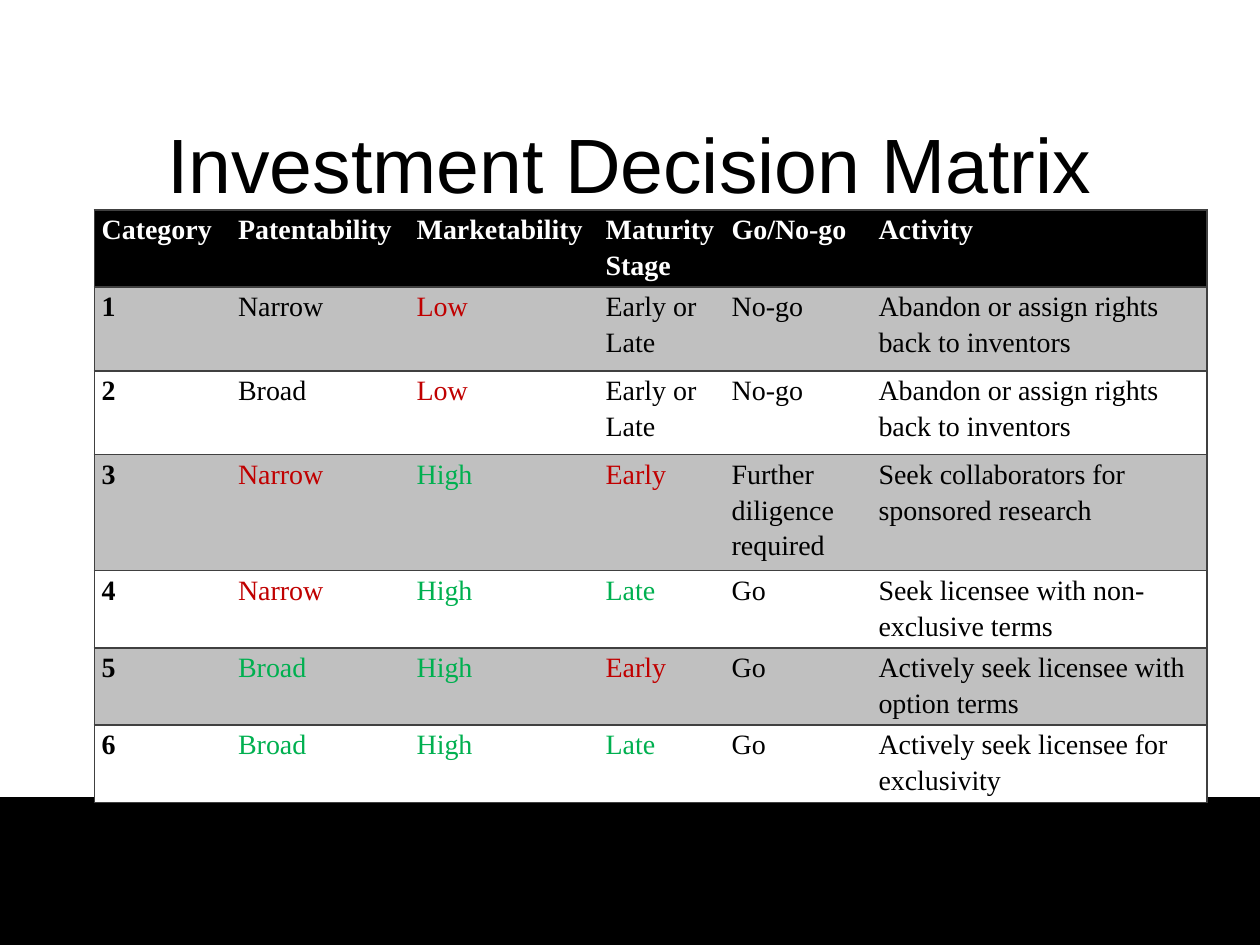
"""Build the investment decision matrix slide."""
from dataclasses import dataclass
from typing import NamedTuple

from lxml.etree import SubElement
from pptx import Presentation
from pptx.dml.color import RGBColor
from pptx.enum.shapes import MSO_SHAPE
from pptx.enum.text import MSO_ANCHOR, PP_ALIGN
from pptx.oxml.ns import qn
from pptx.util import Cm, Pt


@dataclass(frozen=True)
class Theme:
    black: str = "000000"
    white: str = "FFFFFF"
    band: str = "C0C0C0"
    border: str = "404040"
    weak: str = "C00000"
    strong: str = "00B050"
    title_font: str = "Arial"
    table_font: str = "Times New Roman"
    title_size: int = 44
    table_size: int = 16
    border_width: int = 1


THEME = Theme()


class Entry(NamedTuple):
    text: str
    color: str = THEME.black
    bold: bool = False


class MatrixRow(NamedTuple):
    height: float
    fill: str
    entries: list[Entry]


def weak(text: str) -> Entry:
    return Entry(text, THEME.weak)


def strong(text: str) -> Entry:
    return Entry(text, THEME.strong)


COLUMN_WIDTHS = [2.75, 3.6, 3.81, 2.54, 2.96, 6.77]
HEADINGS = ["Category", "Patentability", "Marketability", "Maturity Stage", "Go/No-go", "Activity"]
ABANDON = Entry("Abandon or assign rights back to inventors")
EITHER_STAGE, NO_GO, GO = Entry("Early or Late"), Entry("No-go"), Entry("Go")
CATEGORIES = [
    (1.69, [Entry("Narrow"), weak("Low"), EITHER_STAGE, NO_GO, ABANDON]),
    (1.69, [Entry("Broad"), weak("Low"), EITHER_STAGE, NO_GO, ABANDON]),
    (1.69, [weak("Narrow"), strong("High"), weak("Early"), Entry("Further diligence required"),
            Entry("Seek collaborators for sponsored research")]),
    (1.27, [weak("Narrow"), strong("High"), strong("Late"), GO,
            Entry("Seek licensee with non-exclusive terms")]),
    (1.27, [strong("Broad"), strong("High"), weak("Early"), GO,
            Entry("Actively seek licensee with option terms")]),
    (1.27, [strong("Broad"), strong("High"), strong("Late"), GO,
            Entry("Actively seek licensee for exclusivity")]),
]


def matrix_rows() -> list[MatrixRow]:
    header = MatrixRow(0.85, THEME.black, [Entry(text, THEME.white, True) for text in HEADINGS])
    body = [
        MatrixRow(height, THEME.band if number % 2 else THEME.white,
                  [Entry(str(number), bold=True), *entries])
        for number, (height, entries) in enumerate(CATEGORIES, start=1)
    ]
    return [header, *body]


def set_borders(cell, visible_sides: str) -> None:
    properties = cell._tc.get_or_add_tcPr()
    for side in "LRTB":
        line = SubElement(properties, qn(f"a:ln{side}"), w=str(Pt(THEME.border_width)))
        if side in visible_sides:
            fill = SubElement(line, qn("a:solidFill"))
            SubElement(fill, qn("a:srgbClr"), val=THEME.border)
        else:
            SubElement(line, qn("a:noFill"))


def fill_cell(cell, entry: Entry, fill: str, visible_sides: str) -> None:
    set_borders(cell, visible_sides)
    cell.fill.solid()
    cell.fill.fore_color.rgb = RGBColor.from_string(fill)
    cell.margin_left = cell.margin_right = Cm(0.15)
    cell.margin_top = cell.margin_bottom = 0
    cell.text = entry.text
    paragraph = cell.text_frame.paragraphs[0]
    paragraph.line_spacing = 1.15
    paragraph.font.name = THEME.table_font
    paragraph.font.size = Pt(THEME.table_size)
    paragraph.font.bold = entry.bold
    paragraph.font.color.rgb = RGBColor.from_string(entry.color)


def add_matrix(slide, rows: list[MatrixRow]) -> None:
    matrix = slide.shapes.add_table(
        len(rows), len(COLUMN_WIDTHS), Cm(1.9), Cm(4.23),
        Cm(sum(COLUMN_WIDTHS)), Cm(sum(row.height for row in rows)),
    ).table
    for column, width in zip(matrix.columns, COLUMN_WIDTHS):
        column.width = Cm(width)
    last = len(COLUMN_WIDTHS) - 1
    for row_index, row in enumerate(rows):
        matrix.rows[row_index].height = Cm(row.height)
        for column_index, entry in enumerate(row.entries):
            sides = "TB" + {0: "L", last: "R"}.get(column_index, "")
            fill_cell(matrix.cell(row_index, column_index), entry, row.fill, sides)


def add_footer_band(slide) -> None:
    footer = slide.shapes.add_shape(MSO_SHAPE.RECTANGLE, 0, Cm(16.08), Cm(25.4), Cm(2.97))
    footer.shadow.inherit = False
    footer.fill.solid()
    footer.fill.fore_color.rgb = RGBColor.from_string(THEME.black)
    footer.line.color.rgb = RGBColor.from_string(THEME.black)
    footer.line.width = Pt(0.75)


def add_title(slide, text: str) -> None:
    title = slide.shapes.add_textbox(Cm(1.9), Cm(1.7), Cm(21.6), Cm(3.18)).text_frame
    title.word_wrap = True
    title.vertical_anchor = MSO_ANCHOR.MIDDLE
    title.text = text
    paragraph = title.paragraphs[0]
    paragraph.alignment = PP_ALIGN.CENTER
    paragraph.font.name = THEME.title_font
    paragraph.font.size = Pt(THEME.title_size)
    paragraph.font.color.rgb = RGBColor.from_string(THEME.black)


def main() -> None:
    presentation = Presentation()
    presentation.slide_width, presentation.slide_height = Cm(25.4), Cm(19.05)
    slide = presentation.slides.add_slide(presentation.slide_layouts[6])
    add_footer_band(slide)
    add_title(slide, "Investment Decision Matrix")
    add_matrix(slide, matrix_rows())
    presentation.save("out.pptx")


if __name__ == "__main__":
    main()
